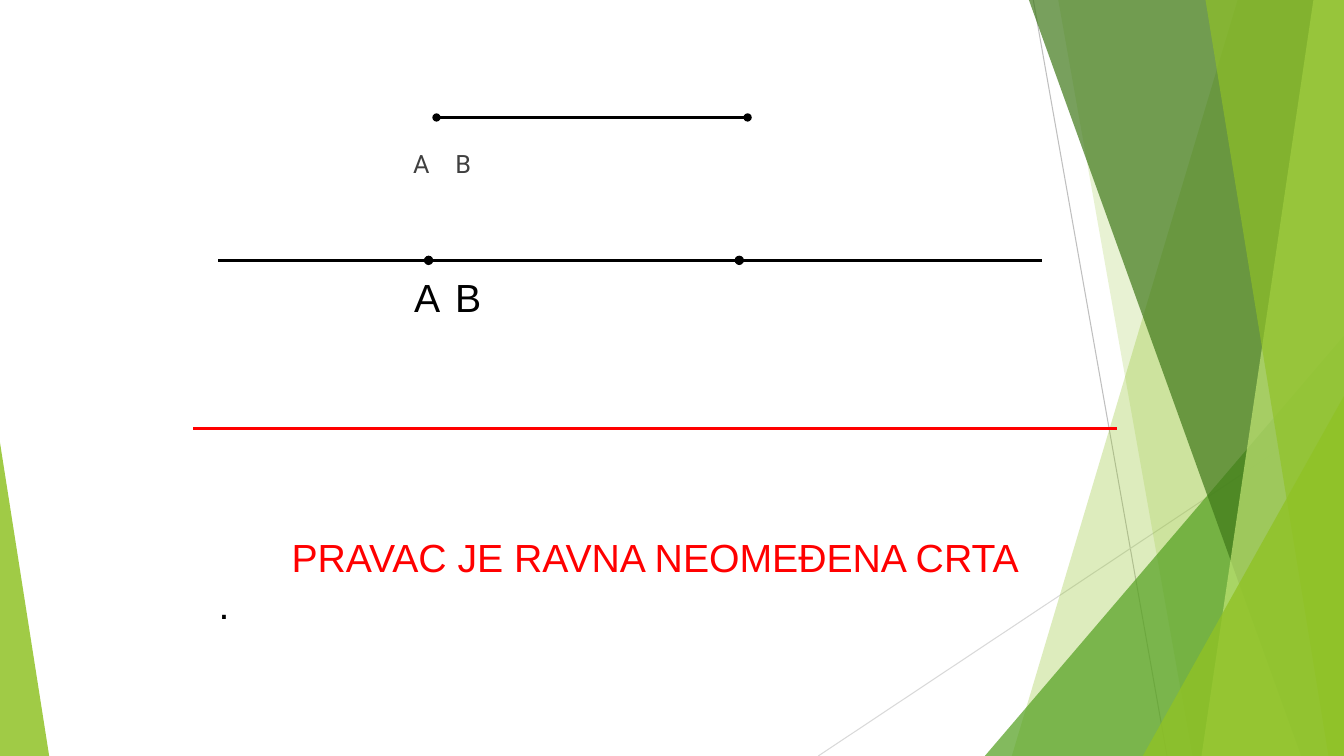
from lxml import etree
from pptx import Presentation
from pptx.dml.color import RGBColor
from pptx.enum.shapes import MSO_CONNECTOR, MSO_SHAPE
from pptx.enum.text import MSO_ANCHOR, MSO_AUTO_SIZE, PP_ALIGN
from pptx.oxml.ns import qn
from pptx.util import Cm, Pt

STRAIGHT = MSO_CONNECTOR.STRAIGHT
TRIANGLE = MSO_SHAPE.ISOSCELES_TRIANGLE
MIDDLE = MSO_ANCHOR.MIDDLE
NO_FIT = MSO_AUTO_SIZE.NONE
LEFT, CENTER = PP_ALIGN.LEFT, PP_ALIGN.CENTER

BLACK = RGBColor(0x00, 0x00, 0x00)
RED = RGBColor(0xFF, 0x00, 0x00)
GREY = RGBColor(0x40, 0x40, 0x40)
MID_GREY = RGBColor(0xBF, 0xBF, 0xBF)
LIGHT_GREY = RGBColor(0xD9, 0xD9, 0xD9)
LIME = RGBColor(0x90, 0xC2, 0x26)
GREEN = RGBColor(0x54, 0xA0, 0x21)
DARK_GREEN = RGBColor(0x3F, 0x78, 0x19)
PALE_LIME = RGBColor(0xC0, 0xE4, 0x74)

W, H = 33.87, 19.05

prs = Presentation()
prs.slide_width, prs.slide_height = Cm(W), Cm(H)
s = prs.slides.add_slide(prs.slide_layouts[1])
title, body = s.placeholders
title.element.getparent().remove(title.element)


def add_line(x1, y1, x2, y2, color, width, dots=False):
    line = s.shapes.add_connector(STRAIGHT, Cm(x1), Cm(y1), Cm(x2), Cm(y2))
    line.line.color.rgb = color
    line.line.width = Pt(width)
    if dots:
        ln = line.line._get_or_add_ln()
        for end in ("a:headEnd", "a:tailEnd"):
            etree.SubElement(ln, qn(end), type="oval")
    etree.SubElement(line._element.spPr, qn("a:effectLst"))


def add_run(p, text, font, size, color):
    r = p.add_run()
    r.text = text
    r.font.name = font
    r.font.size = Pt(size)
    r.font.color.rgb = color


# Thin background lines
add_line(26.04, 0, 29.41, H, MID_GREY, 0.75)
add_line(W, 10.24, 20.62, H, LIGHT_GREY, 0.75)

# Green facets: bands (top x, bottom x) reach the right edge,
# triangles (left, top, width, apex) stand on the bottom edge
facets = [
    ((31.19, 25.5), LIME, 30),
    ((26.67, 30.05), LIME, 20),
    ((24.82, 8.46, 9.05, 1), GREEN, 72),
    ((25.93, 32.79), DARK_GREEN, 70),
    ((33.1, 30.28), PALE_LIME, 70),
    ((30.38, 33.48), LIME, 65),
    ((28.8, 9.98, 5.07, 1), LIME, 80),
    ((0, 11.15, 1.24, 0), LIME, 85),
]
for geometry, color, opacity in facets:
    if len(geometry) == 2:
        top_x, bottom_x = geometry
        band = s.shapes.build_freeform(Cm(top_x), 0)
        band.add_line_segments(
            [(Cm(W), 0), (Cm(W), Cm(H)), (Cm(bottom_x), Cm(H))])
        sp = band.convert_to_shape()
    else:
        left, top, width, apex = geometry
        sp = s.shapes.add_shape(
            TRIANGLE, Cm(left), Cm(top), Cm(width), Cm(H - top))
        sp.adjustments[0] = apex
    sp.shadow.inherit = False
    sp.line.fill.background()
    sp.fill.solid()
    sp.fill.fore_color.rgb = color
    clr = sp._element.spPr.find(".//" + qn("a:srgbClr"))
    etree.SubElement(clr, qn("a:alpha"), val=str(opacity * 1000))

# Segment AB, line through A and B, and the plain line
add_line(11, 2.96, 18.84, 2.96, BLACK, 1.5, dots=True)
add_line(5.5, 6.56, 26.25, 6.56, BLACK, 2.25)
add_line(10.8, 6.56, 18.63, 6.56, BLACK, 2.25, dots=True)
add_line(4.87, 10.8, 28.15, 10.8, RED, 2.25)

# Point labels, B placed by a tab stop
line_labels = s.shapes.add_textbox(0, 0, Cm(1), Cm(1))
labels = [
    (body, 3.6, 4.82, "Roboto", 18, GREY),
    (line_labels, 6.99, 8.16, "Arial", 28, BLACK),
]
for sp, top, tab, font, size, color in labels:
    sp.left, sp.top, sp.width, sp.height = Cm(9.95), Cm(top), Cm(11.22), Cm(1.27)
    tf = sp.text_frame
    tf.word_wrap = True
    tf.auto_size = NO_FIT
    p = tf.paragraphs[0]
    p.line_spacing = 0.8
    p.space_before = Pt(0)
    pPr = p._p.get_or_add_pPr()
    pPr.set("marL", "0")
    pPr.set("indent", "0")
    etree.SubElement(pPr, qn("a:buNone"))
    tabs = etree.SubElement(pPr, qn("a:tabLst"))
    etree.SubElement(tabs, qn("a:tab"), pos=str(Cm(tab)), algn="l")
    add_run(p, " ", font, 24, color)
    add_run(p, "A\tB", font, size, color)

# Definition
sp = s.shapes.add_textbox(Cm(5.08), Cm(12.5), Cm(22.86), Cm(4.24))
tf = sp.text_frame
tf.word_wrap = True
tf.vertical_anchor = MIDDLE
p = tf.paragraphs[0]
p.alignment = CENTER
add_run(p, "PRAVAC JE RAVNA NEOMEĐENA CRTA", "Arial", 28, RED)
p = tf.add_paragraph()
p.alignment = LEFT
p._p.get_or_add_pPr().set("marL", str(Cm(0.18)))
add_run(p, ".", "Arial", 28, BLACK)

prs.save("out.pptx")
